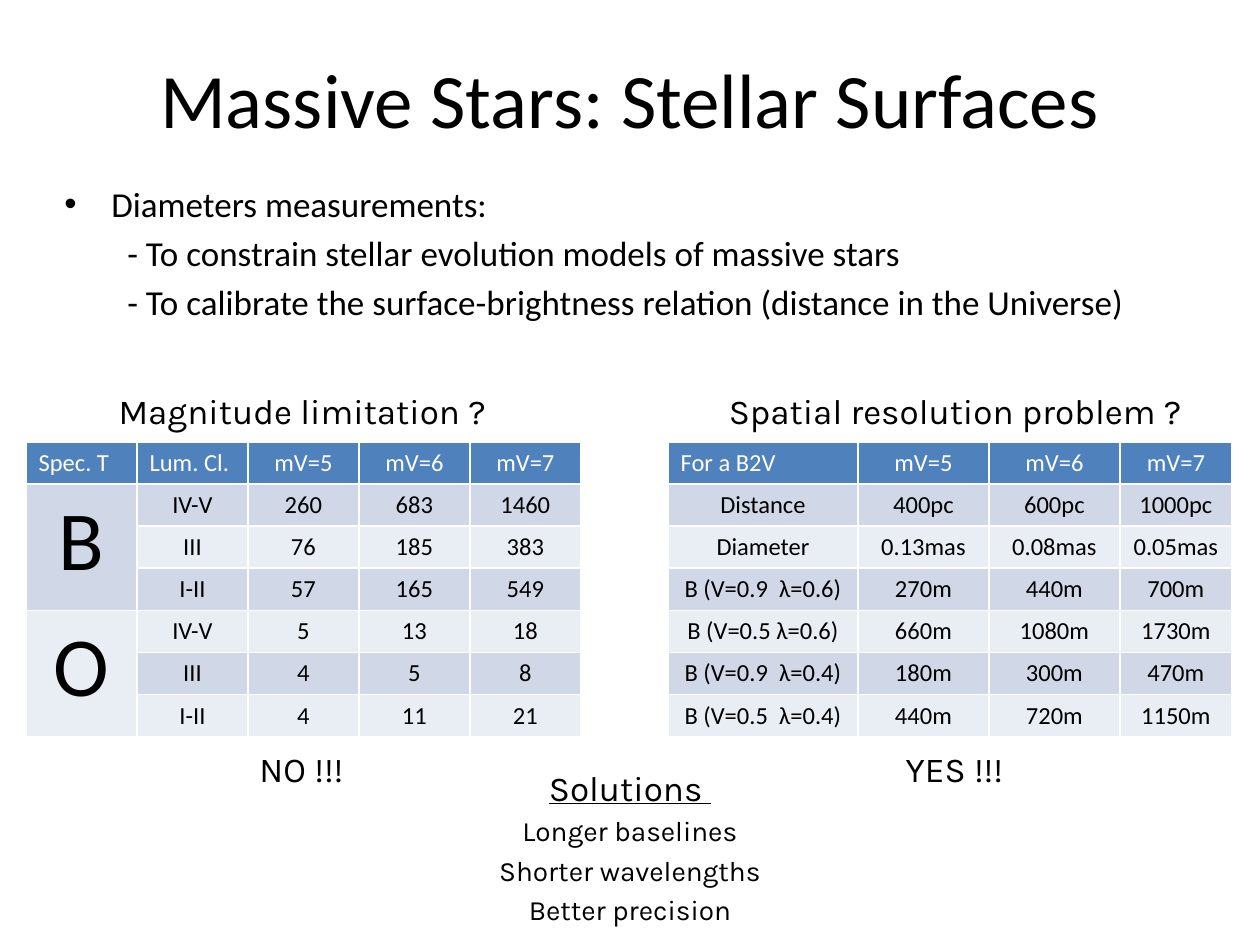
import pptx
import pptx.util
import pptx.dml.color
import pptx.enum.text
import pptx.oxml
import pptx.oxml.ns
from lxml import etree

SCALE = 914400 / 126
ALIGN = pptx.enum.text.PP_ALIGN
ANCHOR = pptx.enum.text.MSO_ANCHOR
BLACK, WHITE = "000000", "FFFFFF"
HEAD, BANDS = "4F81BD", ("E9EDF4", "D0D8E8")
ROW = 42


def px(n):
    return pptx.util.Emu(round(n * SCALE))


def color(text):
    return pptx.dml.color.RGBColor.from_string(text)


def child(node, tag, **attrs):
    return etree.SubElement(node, pptx.oxml.ns.qn(tag), **attrs)


class Deck:
    def __init__(self, wide, high):
        self.prs = pptx.Presentation()
        self.prs.slide_width, self.prs.slide_height = px(wide), px(high)
        self.slide = self.prs.slides.add_slide(self.prs.slide_layouts[6])

    def run(self, para, text, size, font="Calibri", ink=BLACK, under=None):
        run = para.add_run()
        run.text = text
        run.font.size = pptx.util.Pt(size)
        run.font.name = font
        run.font.color.rgb = color(ink)
        run.font.underline = under

    def box(self, x, y, w, h, anchor=ANCHOR.TOP):
        shape = self.slide.shapes.add_textbox(px(x), px(y), px(w), px(h))
        frame = shape.text_frame
        frame.word_wrap = True
        frame.vertical_anchor = anchor
        return frame

    def lines(self, frame, items, font="Calibri", align=ALIGN.CENTER):
        """Write (text, size, underline) items, one paragraph each."""
        paras = []
        for i, (text, size, under) in enumerate(items):
            para = frame.add_paragraph() if i else frame.paragraphs[0]
            para.alignment = align
            if i:
                para.space_before = pptx.util.Pt(round(size * 0.2, 1))
            self.run(para, text, size, font, under=under)
            paras.append(para)
        return paras

    def indent(self, para, left, first=0, mark=None):
        props = para._p.get_or_add_pPr()
        props.set("marL", str(px(left)))
        props.set("indent", str(px(first)))
        if mark:
            child(props, "a:buFont", typeface="Arial")
            child(props, "a:buChar", char=mark)

    def label(self, x, y, w, text):
        self.lines(self.box(x, y, w, 69), [(text, 20, None)], "Karla")

    def border(self, cell):
        props = cell._tc.get_or_add_tcPr()
        for i, side in enumerate("LRTB"):
            line = pptx.oxml.parse_xml(
                f'<a:ln{side} {pptx.oxml.ns.nsdecls("a")} w="12700"><a:solidFill>'
                f'<a:srgbClr val="{WHITE}"/></a:solidFill></a:ln{side}>')
            props.insert(i, line)

    def table(self, x, y, widths, rows, left, spans=()):
        """Draw a banded table; left counts the left-aligned headings."""
        grid = self.slide.shapes.add_table(
            len(rows), len(widths), px(x), px(y),
            px(sum(widths)), px(ROW * len(rows))).table
        for col, width in zip(grid.columns, widths):
            col.width = px(width)
        for r, row in enumerate(rows):
            grid.rows[r].height = px(ROW)
            for c, text in enumerate(row):
                cell = grid.cell(r, c)
                cell.fill.solid()
                cell.fill.fore_color.rgb = color(BANDS[r % 2] if r else HEAD)
                self.border(cell)
                para = cell.text_frame.paragraphs[0]
                if r or c >= left:
                    para.alignment = ALIGN.CENTER
                if text:
                    self.run(para, text, 48 if (r, c) in spans else 14,
                             ink=BLACK if r else WHITE)
        for r, c in spans:
            grid.cell(r, c).merge(grid.cell(r + 2, c))

    def save(self):
        self.prs.save("out.pptx")


def main():
    deck = Deck(1260, 945)
    deck.lines(deck.box(63, 19, 1134, 157, ANCHOR.MIDDLE),
               [("Massive Stars: Stellar Surfaces", 44, None)])

    goals = deck.lines(deck.box(52, 176, 1134, 624), [
        ("Diameters measurements:", 20, None),
        ("- To constrain stellar evolution models of massive stars", 20, None),
        ("- To calibrate the surface-brightness relation "
         "(distance in the Universe)", 20, None)], align=ALIGN.LEFT)
    deck.indent(goals[0], 47, -47, "•")
    for para in goals[1:]:
        deck.indent(para, 63)

    mags = ["mV=5", "mV=6", "mV=7"]
    deck.table(26, 442, [111] * 5, [
        ["Spec. T", "Lum. Cl.", *mags],
        ["B", "IV-V", "260", "683", "1460"],
        ["", "III", "76", "185", "383"],
        ["", "I-II", "57", "165", "549"],
        ["O", "IV-V", "5", "13", "18"],
        ["", "III", "4", "5", "8"],
        ["", "I-II", "4", "11", "21"]], 2, [(1, 0), (4, 0)])
    deck.table(668, 442, [190, 131, 131, 112], [
        ["For a B2V", *mags],
        ["Distance", "400pc", "600pc", "1000pc"],
        ["Diameter", "0.13mas", "0.08mas", "0.05mas"],
        ["B (V=0.9  λ=0.6)", "270m", "440m", "700m"],
        ["B (V=0.5 λ=0.6)", "660m", "1080m", "1730m"],
        ["B (V=0.9  λ=0.4)", "180m", "300m", "470m"],
        ["B (V=0.5  λ=0.4)", "440m", "720m", "1150m"]], 1)

    deck.label(24, 383, 557, "Magnitude limitation ?")
    deck.label(677, 383, 557, "Spatial resolution problem ?")
    deck.label(39, 741, 525, "NO !!!")
    deck.label(692, 741, 525, "YES !!!")
    deck.lines(deck.box(0, 760, 1260, 155), [
        ("Solutions ", 20, True),
        ("Longer baselines", 16, None),
        ("Shorter wavelengths", 16, None),
        ("Better precision", 16, None)], "Karla")
    deck.save()


if __name__ == "__main__":
    main()
